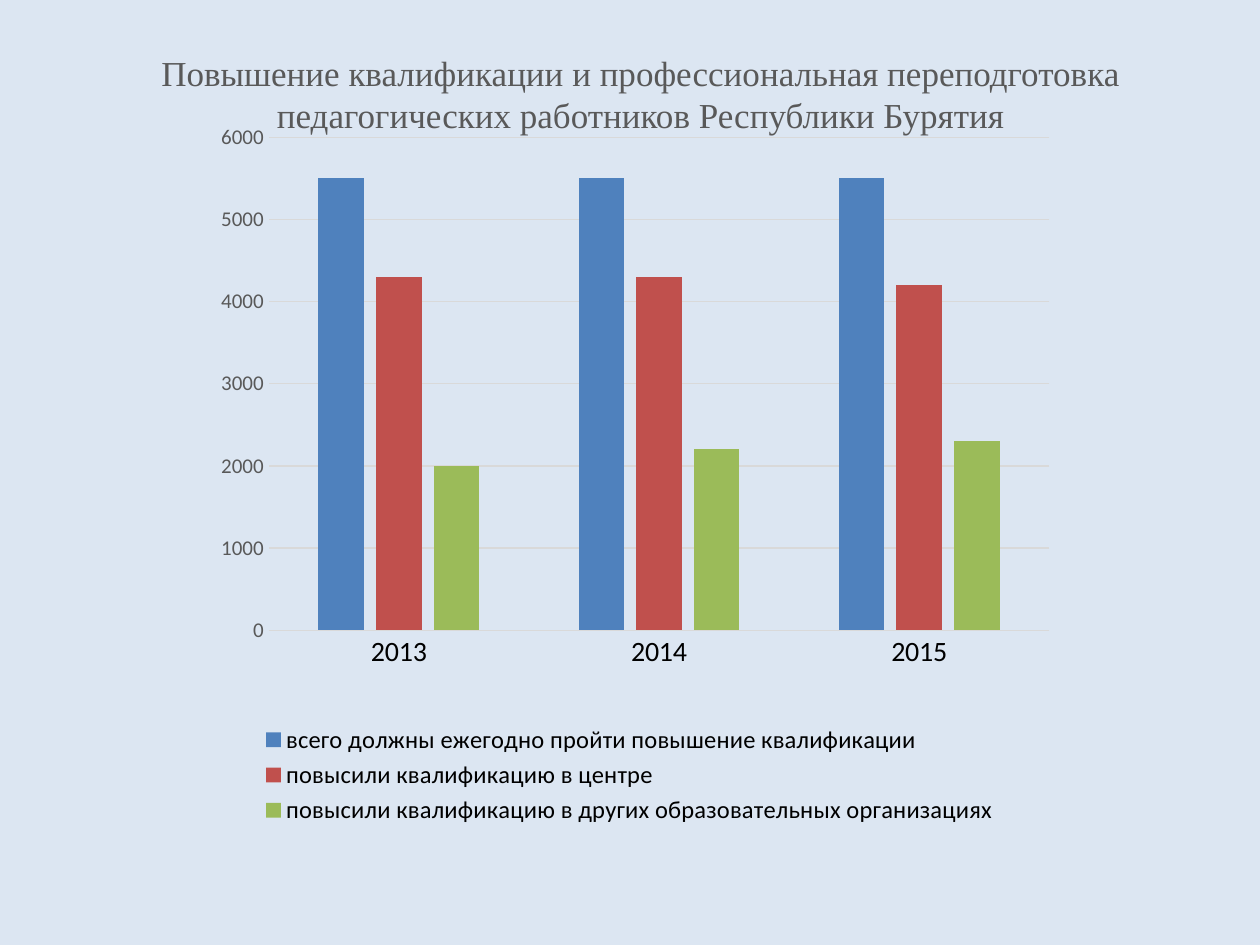
"""Build a slide with a clustered column chart on teachers' professional training."""
import lxml.etree
import pptx
import pptx.chart.data
import pptx.dml.color
import pptx.enum.chart
import pptx.enum.text
import pptx.oxml.ns
import pptx.util

TITLE = ("Повышение квалификации и профессиональная переподготовка "
         "педагогических работников Республики Бурятия")
YEARS = ["2013", "2014", "2015"]
SERIES = [
    ("всего должны ежегодно пройти повышение квалификации", (5500, 5500, 5500), "4F81BD"),
    ("повысили квалификацию в центре", (4300, 4300, 4200), "C0504D"),
    ("повысили квалификацию в других образовательных организациях", (2000, 2200, 2300), "9BBB59"),
]
THEME = {
    "background": "DCE6F2", "grid": "D9D9D9", "grid_width": 0.75,
    "title": {"name": "Times New Roman", "size": 20, "color": "595959"},
    "chart": {"name": "Calibri", "size": 10, "color": "000000"},
    "years": {"name": "Calibri", "size": 16, "color": "000000"},
    "scale": {"name": "Calibri", "size": 12, "color": "595959"},
    "legend": {"name": "Calibri", "size": 14, "color": "000000"},
}
SLIDE_SIZE = (10, 7.5)
TITLE_AREA = (0.28, 0.36, 9.61, 0.77)
CHART_AREA = (1 / 6, 0.92 / 7.5, 2 / 3, 5.67 / 7.5)
PLOT_SHARES = {"x": 0.08, "y": 0.03, "w": 0.93, "h": 0.69}


def color(value):
    """Turn a hex string into a colour."""
    return pptx.dml.color.RGBColor.from_string(value)


def apply(target, **values):
    """Set several attributes on one object."""
    for name, value in values.items():
        setattr(target, name, value)


def style_font(font, role):
    """Give a font the look of a theme role."""
    look = THEME[role]
    apply(font, name=look["name"], size=pptx.util.Pt(look["size"]), bold=False)
    font.color.rgb = color(look["color"])


def style_line(line):
    """Draw a thin grid-coloured line."""
    line.color.rgb = color(THEME["grid"])
    line.width = pptx.util.Pt(THEME["grid_width"])


def place_plot(chart):
    """Fix the inner plot area by shares of the chart."""
    name = pptx.oxml.ns.qn
    area = chart._chartSpace.chart.plotArea
    for old in area.findall(name("c:layout")):
        area.remove(old)
    layout = lxml.etree.Element(name("c:layout"))
    area.insert(0, layout)
    manual = lxml.etree.SubElement(layout, name("c:manualLayout"))
    settings = {"layoutTarget": "inner", "xMode": "edge", "yMode": "edge", **PLOT_SHARES}
    for tag, value in settings.items():
        lxml.etree.SubElement(manual, name(f"c:{tag}")).set("val", str(value))


def add_training_chart(page):
    """Add the column chart with its axes and legend."""
    data = pptx.chart.data.CategoryChartData()
    data.categories = YEARS
    for label, values, _ in SERIES:
        data.add_series(label, values)
    area = [pptx.util.Inches(share * SLIDE_SIZE[i % 2]) for i, share in enumerate(CHART_AREA)]
    chart = page.shapes.add_chart(
        pptx.enum.chart.XL_CHART_TYPE.COLUMN_CLUSTERED, *area, data).chart
    apply(chart, has_title=False, has_legend=True)
    style_font(chart.font, "chart")
    apply(chart.legend, position=pptx.enum.chart.XL_LEGEND_POSITION.BOTTOM,
          include_in_layout=False)
    style_font(chart.legend.font, "legend")
    apply(chart.plots[0], gap_width=219, overlap=-27, vary_by_categories=False)
    for series, (_, _, fill) in zip(chart.plots[0].series, SERIES):
        series.format.fill.solid()
        series.format.fill.fore_color.rgb = color(fill)
    no_tick = pptx.enum.chart.XL_TICK_MARK.NONE
    for axis, role in ((chart.category_axis, "years"), (chart.value_axis, "scale")):
        apply(axis, major_tick_mark=no_tick, minor_tick_mark=no_tick)
        style_font(axis.tick_labels.font, role)
    style_line(chart.category_axis.format.line)
    apply(chart.value_axis, minimum_scale=0, maximum_scale=6000, major_unit=1000)
    chart.value_axis.format.line.fill.background()
    style_line(chart.value_axis.major_gridlines.format.line)
    place_plot(chart)


def add_title(page):
    """Add the centred heading."""
    box = page.shapes.add_textbox(*map(pptx.util.Inches, TITLE_AREA))
    apply(box.text_frame, word_wrap=True,
          auto_size=pptx.enum.text.MSO_AUTO_SIZE.SHAPE_TO_FIT_TEXT)
    para = box.text_frame.paragraphs[0]
    para.alignment = pptx.enum.text.PP_ALIGN.CENTER
    span = para.add_run()
    span.text = TITLE
    style_font(span.font, "title")


def main():
    """Create and save the deck."""
    deck = pptx.Presentation()
    deck.slide_width, deck.slide_height = map(pptx.util.Inches, SLIDE_SIZE)
    page = deck.slides.add_slide(deck.slide_layouts[6])
    page.background.fill.solid()
    page.background.fill.fore_color.rgb = color(THEME["background"])
    add_training_chart(page)
    add_title(page)
    deck.save("out.pptx")


if __name__ == "__main__":
    main()
